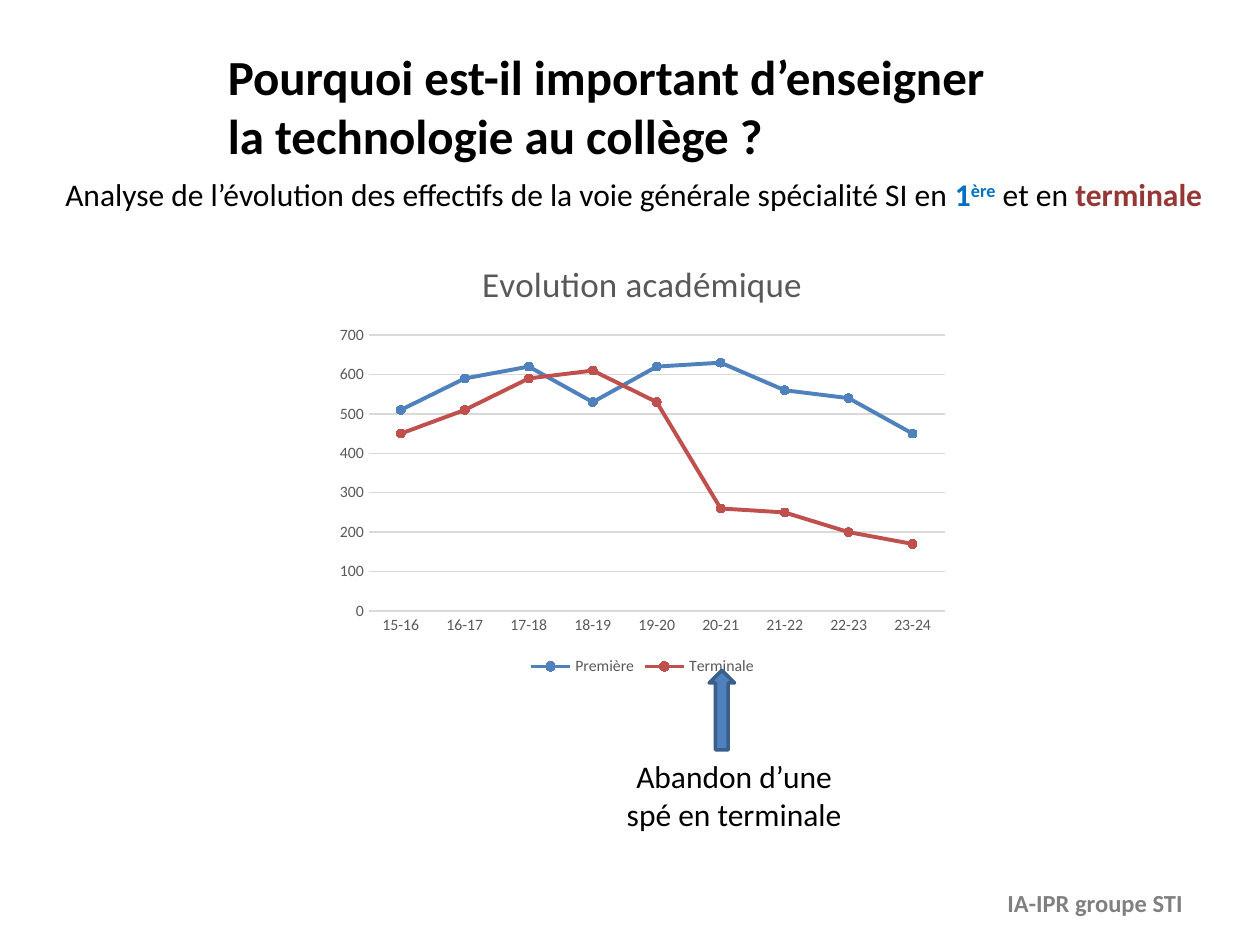
from pptx import Presentation
from pptx.chart.data import CategoryChartData
from pptx.dml.color import RGBColor
from pptx.enum.chart import (XL_CHART_TYPE as ChartType, XL_LEGEND_POSITION as LegendPos,
                             XL_MARKER_STYLE as Marker, XL_TICK_MARK as Tick)
from pptx.enum.shapes import MSO_SHAPE as Shape
from pptx.enum.text import MSO_ANCHOR as Anchor, PP_ALIGN as Align
from pptx.util import Pt


def color(hex_code):
    return RGBColor.from_string(hex_code)


def style(font, size, hex_code, bold=False):
    font.name, font.size, font.bold = "Calibri", Pt(size), bold
    font.color.rgb = color(hex_code)


prs = Presentation()
prs.slide_width, prs.slide_height = Pt(720), Pt(540)
slide = prs.slides.add_slide(prs.slide_layouts[5])
shapes = slide.shapes

# Title
title = shapes.title
title.left, title.top, title.width, title.height = Pt(123), Pt(23), Pt(521), Pt(75)
title.text_frame.text = "Pourquoi est-il important d’enseigner\nla technologie au collège ?"
title.text_frame.vertical_anchor = Anchor.TOP
for line in title.text_frame.paragraphs:
    line.alignment = Align.LEFT
    style(line.runs[0].font, 28, "000000", bold=True)

# Subtitle, with the two school years in their curve colours
subtitle = shapes.add_textbox(Pt(30.25), Pt(96.5), Pt(675.5), Pt(29)).text_frame
subtitle.word_wrap = True
for words, hex_code, bold in [
    ("Analyse de l’évolution des effectifs de la voie générale spécialité SI en ", "000000", False),
    ("1", "0070C0", True),
    ("ère", "0070C0", True),
    (" et en ", "000000", False),
    ("terminale", "953735", True),
]:
    run = subtitle.paragraphs[0].add_run()
    run.text = words
    style(run.font, 18, hex_code, bold)
    if words == "ère":
        run.font._element.set("baseline", "30000")

# Enrolment chart
enrolment = CategoryChartData()
enrolment.categories = [f"{year}-{year + 1}" for year in range(15, 24)]
enrolment.add_series("Première", (510, 590, 620, 530, 620, 630, 560, 540, 450))
enrolment.add_series("Terminale", (450, 510, 590, 610, 530, 260, 250, 200, 170))
chart = shapes.add_chart(ChartType.LINE_MARKERS, Pt(187), Pt(135.5), Pt(360), Pt(253.5),
                         enrolment).chart
style(chart.font, 10, "000000")

chart.has_title = True
chart.chart_title.include_in_layout = False
heading = chart.chart_title.text_frame
heading.text = "Evolution académique"
style(heading.paragraphs[0].runs[0].font, 20, "595959")

chart.has_legend = True
chart.legend.position = LegendPos.BOTTOM
chart.legend.include_in_layout = False
style(chart.legend.font, 9, "595959")

years, pupils = chart.category_axis, chart.value_axis
for axis in (years, pupils):
    axis.major_tick_mark = axis.minor_tick_mark = Tick.NONE
    style(axis.tick_labels.font, 9, "595959")
pupils.minimum_scale, pupils.maximum_scale, pupils.major_unit = 0, 700, 100
pupils.format.line.fill.background()
for rule in (years.format.line, pupils.major_gridlines.format.line):
    rule.color.rgb = color("D9D9D9")
    rule.width = Pt(0.75)

for curve, hex_code in zip(chart.plots[0].series, ("4F81BD", "C0504D")):
    curve.smooth = False
    curve.format.line.color.rgb = color(hex_code)
    curve.format.line.width = Pt(2.25)
    curve.marker.style = Marker.CIRCLE
    curve.marker.size = 5
    curve.marker.format.fill.solid()
    curve.marker.format.fill.fore_color.rgb = color(hex_code)
    curve.marker.format.line.color.rgb = color(hex_code)

# Arrow to the 20-21 school year
arrow = shapes.add_shape(Shape.UP_ARROW, Pt(405.25), Pt(383), Pt(14.5), Pt(45.5))
arrow.shadow.inherit = False
arrow.fill.solid()
arrow.fill.fore_color.rgb = color("4F81BD")
arrow.line.color.rgb = color("3A5F8C")
arrow.line.width = Pt(2)

# Arrow caption and footer
for words, box, align, size, hex_code, bold in [
    ("Abandon d’une spé en terminale", (348.5, 429, 142, 51), Align.CENTER, 18, "000000", False),
    ("IA-IPR groupe STI", (462, 504, 221, 24.5), Align.RIGHT, 14, "808080", True),
]:
    note = shapes.add_textbox(*map(Pt, box)).text_frame
    note.word_wrap = True
    note.text = words
    note.paragraphs[0].alignment = align
    style(note.paragraphs[0].runs[0].font, size, hex_code, bold)

prs.save("out.pptx")
